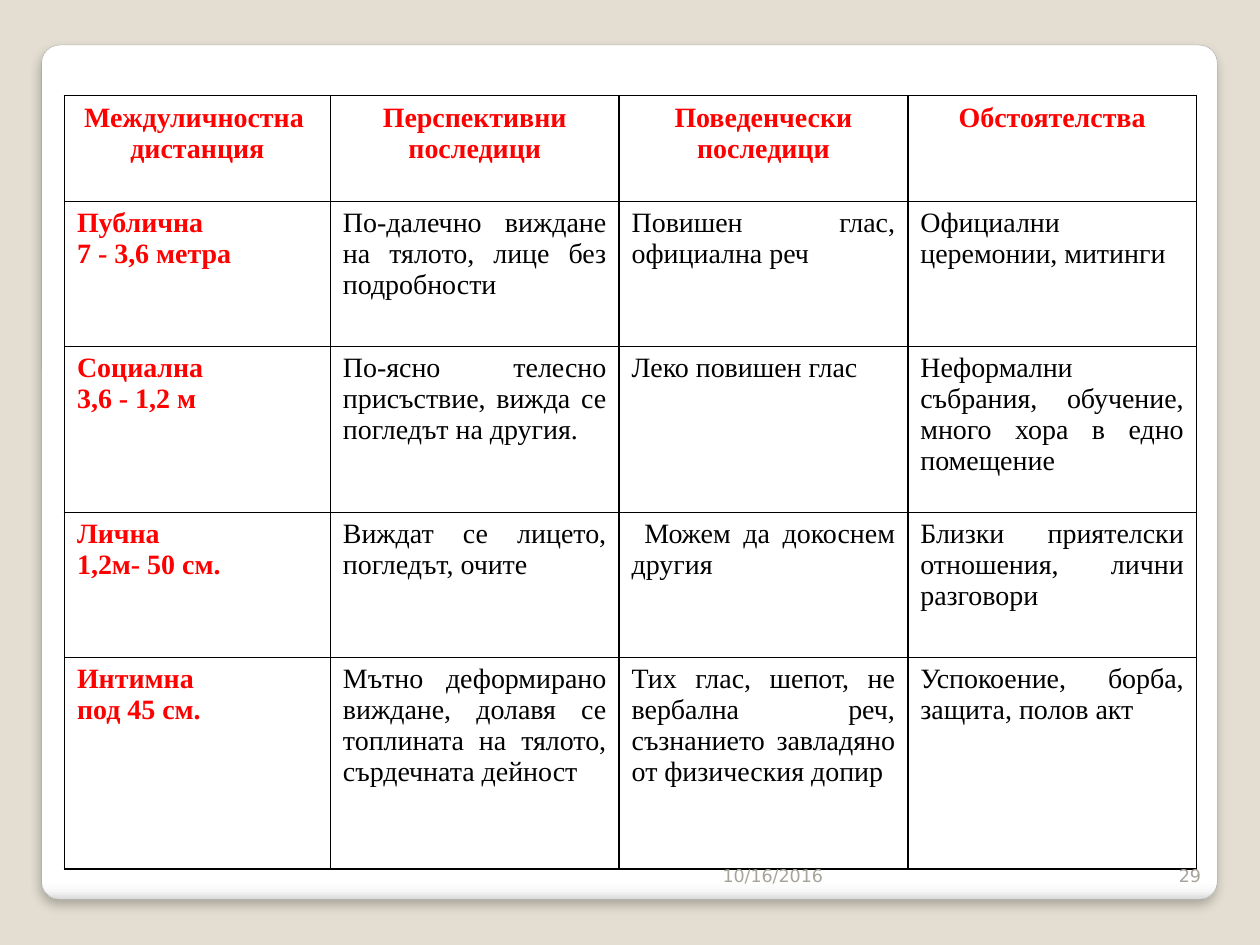
"""Build a slide with a table of interpersonal distances."""
from typing import NamedTuple

from pptx import Presentation
from pptx.dml.color import RGBColor
from pptx.enum.shapes import MSO_SHAPE
from pptx.enum.text import MSO_ANCHOR, PP_ALIGN as AL
from pptx.oxml import parse_xml
from pptx.util import Cm, Pt

NS = 'xmlns:a="http://schemas.openxmlformats.org/drawingml/2006/main"'
RED, BLACK, GREY = "FF0000", "000000", "A8A49B"


class Style(NamedTuple):
    size: int
    font: str
    color: str
    bold: bool = False


class Row(NamedTuple):
    height: float
    cells: list[str]


class Footer(NamedTuple):
    left: float
    width: float
    text: str


HEAD = Style(16, "Times New Roman", RED, True)
BODY = Style(16, "Times New Roman", BLACK)
SMALL = Style(10, "DejaVu Sans", GREY)
COLS = [5.36, 5.82, 5.82, 5.82]
ROWS = [
    Row(2.13, ["Междуличностна \nдистанция", "Перспективни последици",
               "Поведенчески последици", "Обстоятелства"]),
    Row(2.92, ["Публична\n7 - 3,6 метра",
               "По-далечно виждане на тялото, лице без подробности",
               "Повишен глас, официална реч",
               "Официални церемонии, митинги"]),
    Row(3.35, ["Социална\n3,6 - 1,2 м",
               "По-ясно телесно присъствие, вижда се погледът на другия.",
               "Леко повишен глас",
               "Неформални събрания, обучение, много хора в едно помещение"]),
    Row(2.92, ["Лична\n1,2м- 50 см.",
               "Виждат се лицето, погледът, очите",
               " Можем да докоснем другия",
               "Близки приятелски отношения, лични разговори"]),
    Row(4.27, ["Интимна\nпод 45 см.",
               "Мътно деформирано виждане, долавя се топлината на тялото, "
               "сърдечната дейност",
               "Тих глас, шепот, не вербална реч, съзнанието завладяно "
               "от физическия допир",
               "Успокоение, борба, защита, полов акт"]),
]
FOOTERS = [Footer(10.49, 6.35, "10/16/2016"), Footer(23.19, 1.27, "29")]


def rgb(color: str) -> RGBColor:
    return RGBColor.from_string(color)


def write(tf, text: str, style: Style, align: AL) -> None:
    tf.word_wrap = True
    for i, line in enumerate(text.split("\n")):
        p = tf.add_paragraph() if i else tf.paragraphs[0]
        p.alignment = align
        r = p.add_run()
        r.text = line
        r.font.size, r.font.name = Pt(style.size), style.font
        r.font.bold, r.font.color.rgb = style.bold, rgb(style.color)


def add_panel(s) -> None:
    sp = s.shapes.add_shape(MSO_SHAPE.ROUNDED_RECTANGLE,
                            Cm(0.84), Cm(0.91), Cm(23.7), Cm(17.22))
    sp.adjustments[0] = 0.021
    sp.line.color.rgb, sp.line.width = rgb("A4A4A4"), Pt(0.16)
    stops = [(0, "FFFFFF"), (98, "FFFFFF"), (99, "F7F7F7"), (100, "DADADA")]
    gs = "".join(f'<a:gs pos="{pos * 1000}"><a:srgbClr val="{c}"/></a:gs>'
                 for pos, c in stops)
    spPr = sp.element.spPr
    spPr.ln.addprevious(parse_xml(
        f'<a:gradFill {NS}><a:gsLst>{gs}</a:gsLst>'
        '<a:lin ang="5400000" scaled="0"/></a:gradFill>'))
    spPr.append(parse_xml(
        f'<a:effectLst {NS}><a:outerShdw blurRad="{Pt(6)}" dist="{Pt(4)}" '
        'dir="5400000" algn="t" rotWithShape="0"><a:srgbClr val="000000">'
        '<a:alpha val="25000"/></a:srgbClr></a:outerShdw></a:effectLst>'))


def add_borders(cell) -> None:
    tcPr = cell._tc.get_or_add_tcPr()
    for side in "LRTB":
        tcPr.append(parse_xml(
            f'<a:ln{side} {NS} w="{Pt(1)}"><a:solidFill>'
            f'<a:srgbClr val="{BLACK}"/></a:solidFill></a:ln{side}>'))
    cell.fill.background()


def add_distances(s) -> None:
    tbl = s.shapes.add_table(len(ROWS), len(COLS), Cm(1.3), Cm(1.93),
                             Cm(sum(COLS)), Cm(sum(r.height for r in ROWS))).table
    tbl.first_row = tbl.horz_banding = False
    for col, width in zip(tbl.columns, COLS):
        col.width = Cm(width)
    for i, row in enumerate(ROWS):
        tbl.rows[i].height = Cm(row.height)
        for j, text in enumerate(row.cells):
            cell = tbl.cell(i, j)
            add_borders(cell)
            write(cell.text_frame, text, BODY if i and j else HEAD,
                  AL.JUSTIFY if i else AL.CENTER)


def add_footer(s, footer: Footer) -> None:
    tf = s.shapes.add_textbox(Cm(footer.left), Cm(16.97),
                              Cm(footer.width), Cm(1.02)).text_frame
    tf.vertical_anchor = MSO_ANCHOR.BOTTOM
    write(tf, footer.text, SMALL, AL.RIGHT)


def main() -> None:
    prs = Presentation()
    prs.slide_width, prs.slide_height = Cm(25.4), Cm(19.05)
    s = prs.slides.add_slide(prs.slide_layouts[6])
    s.background.fill.solid()
    s.background.fill.fore_color.rgb = rgb("E3DED1")
    add_panel(s)
    add_distances(s)
    for footer in FOOTERS:
        add_footer(s, footer)
    prs.save("out.pptx")


if __name__ == "__main__":
    main()
